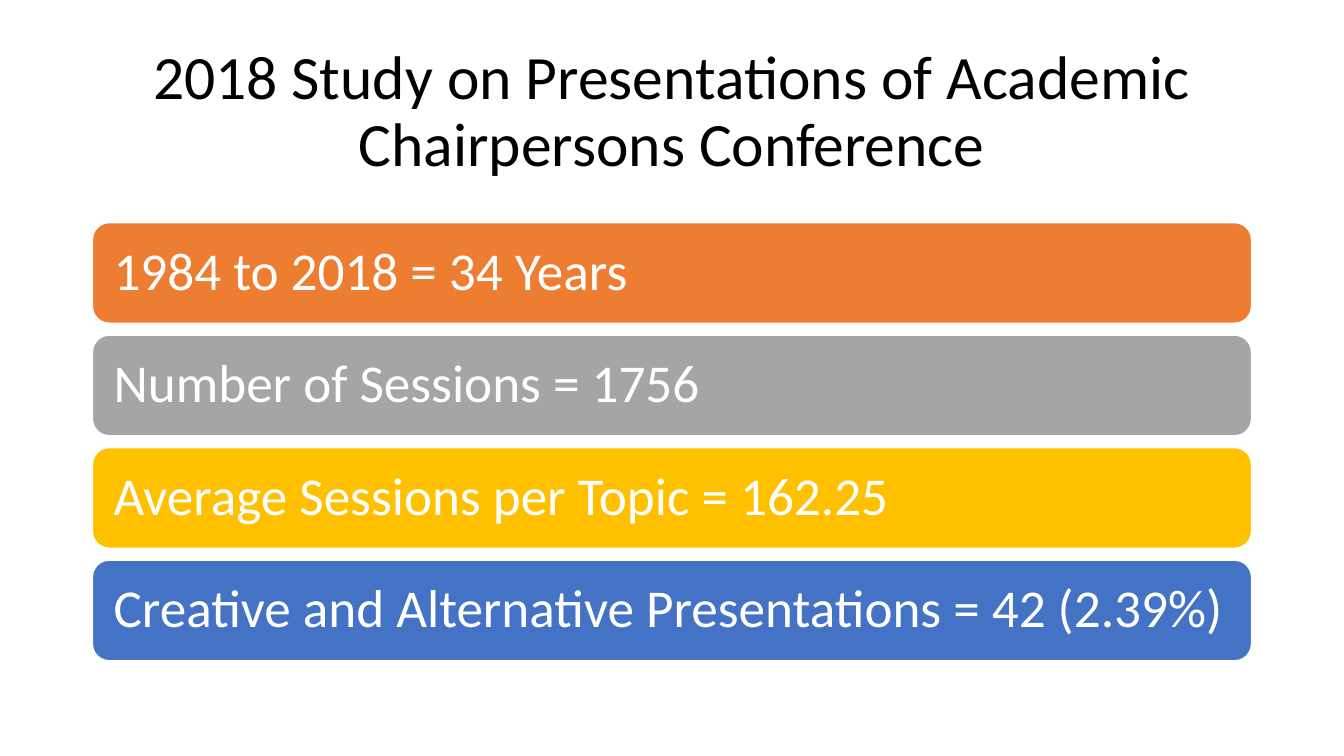
from pptx import Presentation
from pptx.dml.color import RGBColor
from pptx.enum.shapes import MSO_SHAPE as Shape
from pptx.enum.text import MSO_ANCHOR as Anchor, MSO_AUTO_SIZE as AutoSize, PP_ALIGN as Align
from pptx.util import Cm, Pt

LEFT, WIDTH = 2.33, 29.21
FACTS = [
    ("1984 to 2018 = 34 Years", "ED7D31"),
    ("Number of Sessions = 1756", "A5A5A5"),
    ("Average Sessions per Topic = 162.25", "FFC000"),
    ("Creative and Alternative Presentations = 42 (2.39%)", "4472C4"),
]


def color(value):
    return RGBColor.from_string(value)


def write(box, text, size, ink, align=Align.LEFT, inset=0.25):
    frame = box.text_frame
    frame.word_wrap = True
    frame.auto_size = AutoSize.NONE
    frame.vertical_anchor = Anchor.MIDDLE
    frame.margin_left = frame.margin_right = Cm(inset)
    frame.margin_top = frame.margin_bottom = Cm(0.13)
    para = frame.paragraphs[0]
    para.alignment = align
    para.line_spacing = 0.9
    span = para.add_run()
    span.text = text
    span.font.name = "Calibri"
    span.font.size = Pt(size)
    span.font.color.rgb = color(ink)


def add_title(page, left, top, width, height):
    title = page.shapes.title
    title.left, title.top = Cm(left), Cm(top)
    title.width, title.height = Cm(width), Cm(height)
    write(title, "2018 Study on Presentations of Academic Chairpersons Conference",
          size=44, ink="000000", align=Align.CENTER)


def add_bars(page, left, top, width, height, gap=0.3):
    bar_height = (height - gap * (len(FACTS) - 1)) / len(FACTS)
    for index, (text, fill) in enumerate(FACTS):
        bar_top = top + index * (bar_height + gap)
        bar = page.shapes.add_shape(Shape.ROUNDED_RECTANGLE, Cm(left), Cm(bar_top),
                                    Cm(width), Cm(bar_height))
        bar.shadow.inherit = False
        bar.fill.solid()
        bar.fill.fore_color.rgb = color(fill)
        bar.line.color.rgb = color("FFFFFF")
        bar.line.width = Pt(1)
        write(bar, text, size=38, ink="FFFFFF", inset=0.41)


def main():
    deck = Presentation()
    deck.slide_width, deck.slide_height = Cm(33.87), Cm(19.05)
    page = deck.slides.add_slide(deck.slide_layouts[5])
    add_title(page, LEFT, 1.01, WIDTH, 3.68)
    add_bars(page, LEFT, 5.61, WIDTH, 11.04)
    deck.save("out.pptx")


if __name__ == "__main__":
    main()
